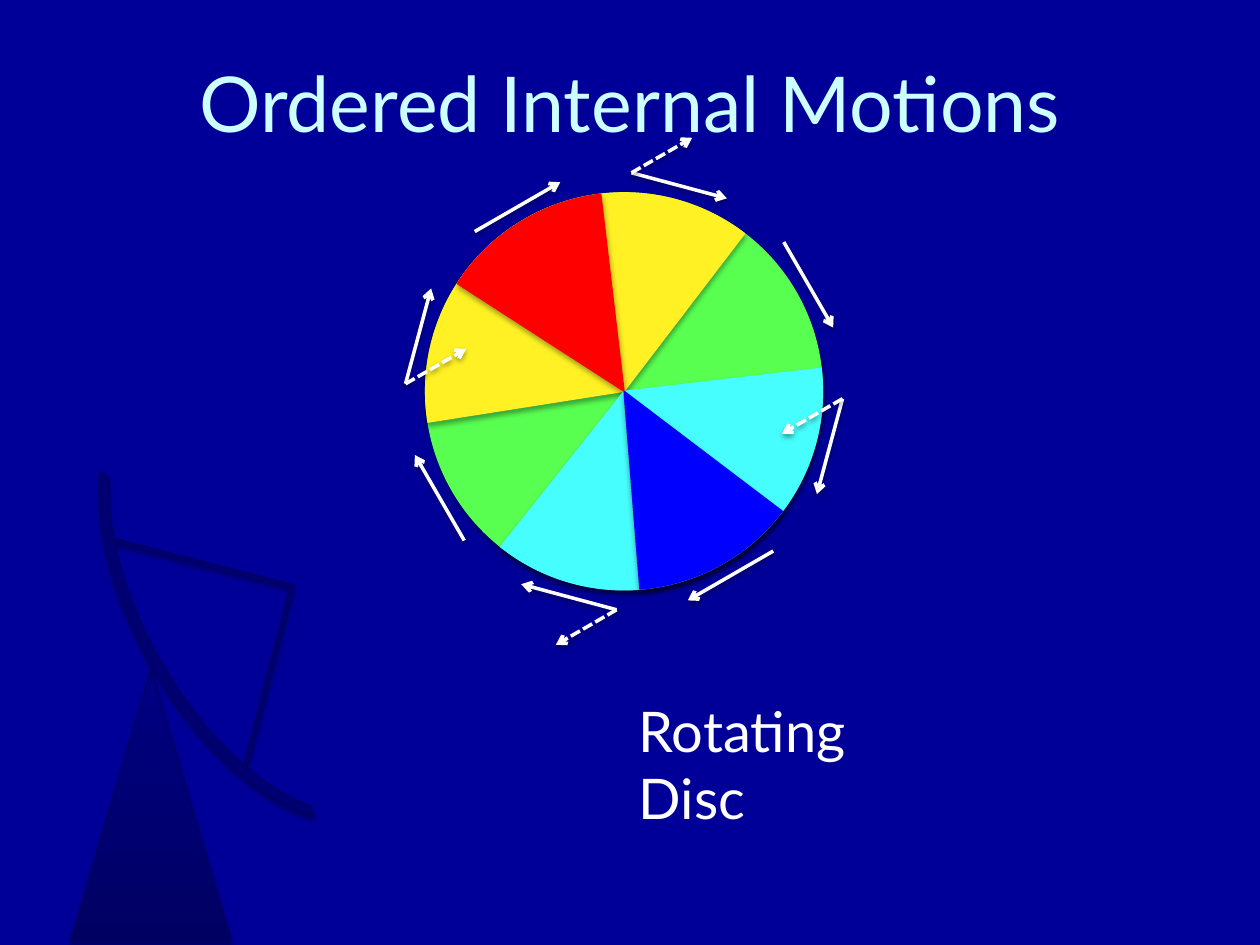
from math import cos, sin, radians
from lxml.etree import SubElement
from pptx import Presentation
from pptx.dml.color import RGBColor
from pptx.enum.dml import MSO_LINE
from pptx.enum.shapes import MSO_CONNECTOR, MSO_SHAPE
from pptx.enum.text import MSO_ANCHOR, MSO_AUTO_SIZE, PP_ALIGN
from pptx.oxml.ns import qn
from pptx.util import Pt


def paint(color, code):
    color.rgb = RGBColor.from_string(code)


def add_shade(props, alpha, dist):
    effect = props.find(qn("a:effectLst"))
    if effect is None:
        effect = SubElement(props, qn("a:effectLst"))
    shade = SubElement(effect, qn("a:outerShdw"), blurRad=str(Pt(3.1)),
                       dist=str(Pt(dist)), dir="5400000", rotWithShape="0")
    tone = SubElement(shade, qn("a:srgbClr"), val="000000")
    SubElement(tone, qn("a:alpha"), val=str(alpha * 1000))


def add_part(shapes, kind, box, fill, line, angle=0, adjust=()):
    part = shapes.add_shape(kind, *map(Pt, box))
    part.rotation = angle
    for i, value in enumerate(adjust):
        part.adjustments[i] = value
    part.fill.solid()
    paint(part.fill.fore_color, fill)
    paint(part.line.color, line)
    part.line.width = Pt(0.75)
    part.shadow.inherit = False
    add_shade(part._element.spPr, 35, 1.8)
    return part


def add_text(slide, box, text, size, code):
    label = slide.shapes.add_textbox(*map(Pt, box))
    frame = label.text_frame
    frame.word_wrap = True
    frame.text = text
    para = frame.paragraphs[0]
    para.font.name = "Lato"
    para.font.size = Pt(size)
    paint(para.font.color, code)
    return frame


def add_title(slide, box):
    frame = add_text(slide, box, "Ordered Internal Motions", 44, "CCFFFF")
    frame.vertical_anchor = MSO_ANCHOR.MIDDLE
    frame.paragraphs[0].alignment = PP_ALIGN.CENTER


def add_label(slide, box):
    frame = add_text(slide, box, "Rotating Disc", 32, "FFFFFF")
    frame.auto_size = MSO_AUTO_SIZE.SHAPE_TO_FIT_TEXT


def add_wheel(slide, box):
    shapes = slide.shapes.add_group_shape().shapes
    add_part(shapes, MSO_SHAPE.OVAL, box, "58FF51", "58FF51", 60)
    for code, angle, start, end in [
        ("FFF124", 60, 66.63, 148.44),
        ("FF0000", 60, 91.7, 121.96),
        ("47FEFF", 240, 68, 149.06),
        ("0000FF", 60, 202.3, 15.24),
    ]:
        add_part(shapes, MSO_SHAPE.PIE, box, code, code, angle, (start, end))


def add_dish(slide, box):
    x, y, w, h = box
    shapes = slide.shapes.add_group_shape().shapes
    tower = add_part(shapes, MSO_SHAPE.ISOSCELES_TRIANGLE,
                     (x + 28, y + 106.6, 92.2, 154.8), "000082", "000063")
    tower.fill.gradient()
    tower.fill.gradient_angle = 270
    for stop, code in zip(tower.fill.gradient_stops, ("000082", "000063")):
        paint(stop.color, code)
    add_part(shapes, MSO_SHAPE.HALF_FRAME, (x + 34.6, y + 42.5, 109.4, 109.4),
             "000073", "000063", 104.5, (0.02, 0.02))
    add_part(shapes, MSO_SHAPE.BLOCK_ARC, (x, y, w, h), "000073", "000063",
             240, (117.23, 204.31, 0.04))


def shift(point, angle, length):
    turn = radians(angle)
    return point[0] + length * cos(turn), point[1] + length * sin(turn)


def add_arrow(slide, start, angle, length, dash=False):
    ends = start + shift(start, angle, length)
    arrow = slide.shapes.add_connector(MSO_CONNECTOR.STRAIGHT, *map(Pt, ends))
    paint(arrow.line.color, "FFFFFF")
    arrow.line.width = Pt(2)
    if dash:
        arrow.line.dash_style = MSO_LINE.SQUARE_DOT
    props = arrow._element.spPr
    SubElement(props.find(qn("a:ln")), qn("a:tailEnd"), type="arrow")
    add_shade(props, 38, 1.6)


def add_motion(slide, box):
    x, y, w, h = box
    hub = x + w / 2, y + h / 2
    tails = {}
    for angle in range(-165, 195, 45):
        middle = shift(hub, angle, 121.7)
        tails[angle] = shift(middle, angle - 90, 28.2)
        add_arrow(slide, tails[angle], angle + 90, 56.4)
    for angle in (-165, -75, 105, 15):
        drift = -30 if angle < 0 else 150
        add_arrow(slide, tails[angle], drift, 40, True)


def main():
    deck = Presentation()
    deck.slide_width, deck.slide_height = Pt(720), Pt(540)
    slide = deck.slides.add_slide(deck.slide_layouts[6])
    slide.background.fill.solid()
    paint(slide.background.fill.fore_color, "000099")
    wheel = 243.2, 110.2, 226.8, 226.8
    add_dish(slide, (12.2, 276.5, 271.4, 139.7))
    add_title(slide, (54, 12.8, 612, 90))
    add_wheel(slide, wheel)
    add_label(slide, (357.8, 394.6, 185.8, 46))
    add_motion(slide, wheel)
    deck.save("out.pptx")


if __name__ == "__main__":
    main()
